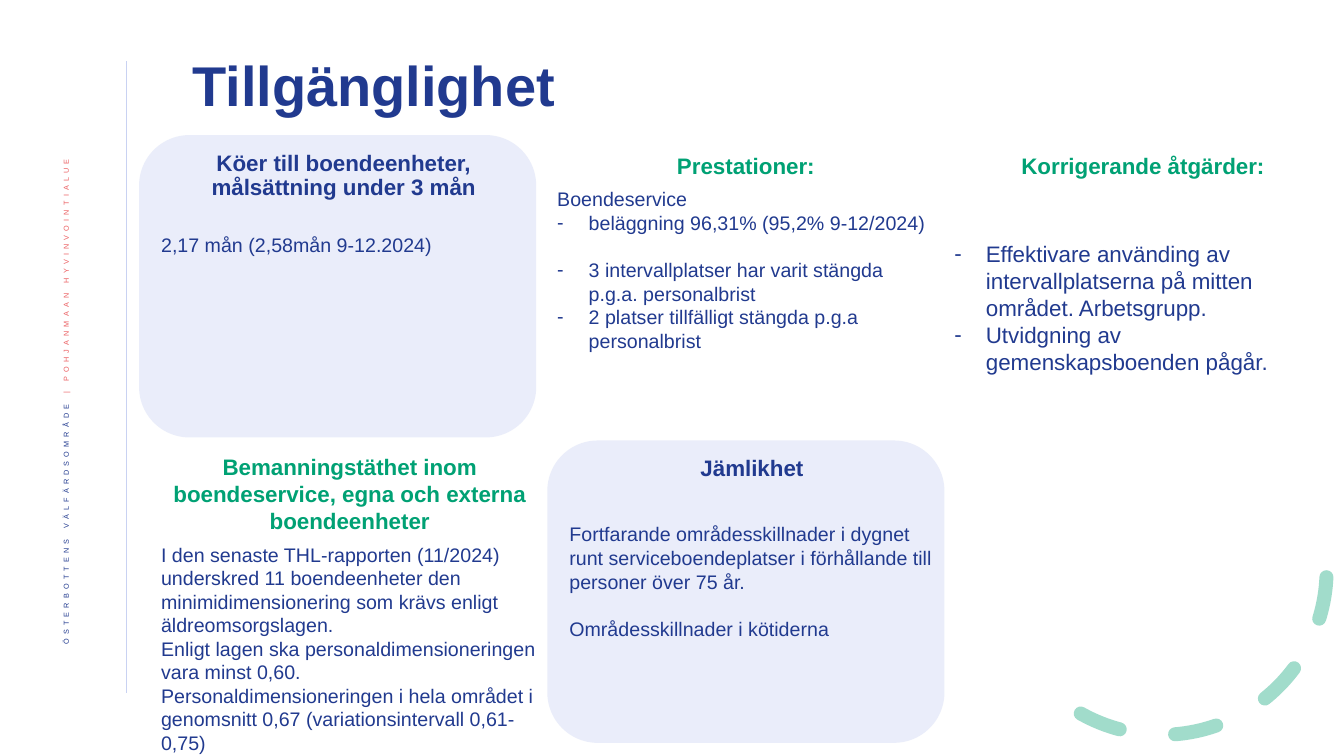
from lxml.etree import SubElement
from pptx import Presentation
from pptx.dml.color import RGBColor
from pptx.enum.shapes import MSO_CONNECTOR, MSO_SHAPE
from pptx.enum.dml import MSO_LINE
from pptx.enum.text import MSO_ANCHOR, PP_ALIGN
from pptx.oxml.ns import qn
from pptx.util import Pt

NAVY, GREEN, CORAL, LAVENDER = "213A8F", "00A174", "EB5C5F", "C9D2F2"
COLUMN_WIDTH, CARD_HEIGHT, CARD_INSET = 283.68, 216, 8.64
BULLET_INDENT = 22.5

TITLE = "Tillgänglighet"
SIDE_LABEL = [("ÖSTERBOTTENS VÄLFÄRDSOMRÅDE ", NAVY), ("| POHJANMAAN HYVINVOINTIALUE ", CORAL)]

# Each body line: text, bulleted, space before in points
SECTIONS = [
    dict(heading="Köer till boendeenheter, målsättning under 3 mån",
         left=99.36, top=96.48, card=True, after=23, size=14,
         body=[("2,17 mån (2,58mån 9-12.2024)", False, 0)]),
    dict(heading="Prestationer:",
         left=390.96, top=105.12, card=False, after=6, size=14,
         body=[("Boendeservice", False, 0),
               ("beläggning 96,31% (95,2% 9-12/2024)", True, 0),
               ("3 intervallplatser har varit stängda p.g.a. personalbrist", True, 17),
               ("2 platser tillfälligt stängda p.g.a personalbrist", True, 0)]),
    dict(heading="Korrigerande åtgärder:",
         left=674.64, top=105.12, card=False, after=44, size=16,
         body=[("Effektivare använding av intervallplatserna på mitten området. Arbetsgrupp.", True, 0),
               ("Utvidgning av gemenskapsboenden pågår.", True, 0)]),
    dict(heading="Jämlikhet",
         left=390.96, top=314.64, card=True, after=29, size=14,
         body=[("Fortfarande områdesskillnader i dygnet runt serviceboendeplatser "
                "i förhållande till personer över 75 år.", False, 0),
               ("Områdesskillnader i kötiderna", False, 17)]),
    dict(heading="Bemanningstäthet inom boendeservice, egna och externa boendeenheter",
         left=108, top=320.4, card=False, after=6, size=14,
         body=[("I den senaste THL-rapporten (11/2024) underskred 11 boendeenheter den "
                "minimidimensionering som krävs enligt äldreomsorgslagen.", False, 0),
               ("Enligt lagen ska personaldimensioneringen vara minst 0,60.", False, 0),
               ("Personaldimensioneringen i hela området i genomsnitt 0,67 "
                "(variationsintervall 0,61-0,75)", False, 0)]),
]


def rgb(value):
    return RGBColor.from_string(value)


def set_alpha(properties, percent):
    color = next(properties.iter(qn("a:srgbClr")))
    SubElement(color, qn("a:alpha"), val=str(percent * 1000))


def write(paragraph, text, size=14, color=NAVY, bold=False, align=PP_ALIGN.LEFT,
          spacing=1.0, before=0, after=0, bullet=False):
    """Append a formatted run to the paragraph and return its font."""
    if bullet:
        properties = paragraph._p.get_or_add_pPr()
        properties.set("marL", str(Pt(BULLET_INDENT)))
        properties.set("indent", str(-Pt(BULLET_INDENT)))
        SubElement(properties, qn("a:buFont"), typeface="Arial")
        SubElement(properties, qn("a:buChar"), char="-")
    paragraph.alignment = align
    paragraph.line_spacing = spacing
    paragraph.space_before, paragraph.space_after = Pt(before), Pt(after)
    run = paragraph.add_run()
    run.text = text
    font = run.font
    font.name, font.size, font.bold = "Arial", Pt(size), bold
    font.color.rgb = rgb(color)
    return font


def add_frame(slide, left, top, width, height):
    box = slide.shapes.add_textbox(Pt(left), Pt(top), Pt(width), Pt(height))
    box.text_frame.word_wrap = True
    return box.text_frame


def add_side_label(slide):
    rule = slide.shapes.add_connector(MSO_CONNECTOR.STRAIGHT, Pt(90), Pt(43.92), Pt(90), Pt(495.36))
    rule.line.color.rgb = rgb(LAVENDER)
    rule.line.width = Pt(0.5)
    SubElement(rule._element.spPr, qn("a:effectLst"))

    frame = add_frame(slide, 30.24, 102.24, 37.44, 412.56)
    frame.vertical_anchor = MSO_ANCHOR.MIDDLE
    frame._txBody.bodyPr.set("vert", "vert270")
    for text, color in SIDE_LABEL:
        font = write(frame.paragraphs[0], text, size=9, color=color,
                     align=PP_ALIGN.RIGHT, spacing=0.9)
        font._element.set("baseline", "30000")
        font._element.set("spc", "300")


def add_dashed_arc(slide):
    arc = slide.shapes.add_shape(MSO_SHAPE.ARC, Pt(712.08), Pt(289.44), Pt(235.44), Pt(235.44))
    arc.shadow.inherit = False
    arc.rotation = 98.9
    arc.adjustments[0], arc.adjustments[1] = 158.17, 17.81
    arc.fill.background()
    arc.line.color.rgb = rgb(GREEN)
    arc.line.width = Pt(10)
    arc.line.dash_style = MSO_LINE.DASH
    outline = arc._element.spPr.find(qn("a:ln"))
    outline.set("cap", "rnd")
    set_alpha(outline, 36)


def add_section(slide, heading, left, top, card, after, size, body):
    width = COLUMN_WIDTH
    if card:
        panel = slide.shapes.add_shape(MSO_SHAPE.ROUNDED_RECTANGLE, Pt(left), Pt(top),
                                       Pt(COLUMN_WIDTH), Pt(CARD_HEIGHT))
        panel.shadow.inherit = False
        panel.fill.solid()
        panel.fill.fore_color.rgb = rgb(LAVENDER)
        set_alpha(panel._element.spPr, 38)
        panel.line.fill.background()
        left, top, width = left + CARD_INSET, top + CARD_INSET, width - CARD_INSET
    frame = add_frame(slide, left, top, width, CARD_HEIGHT - CARD_INSET)
    write(frame.paragraphs[0], heading, size=16, color=NAVY if card else GREEN, bold=True,
          align=PP_ALIGN.CENTER, spacing=0.9 if card else 1.0, after=after)
    for text, bullet, before in body:
        write(frame.add_paragraph(), text, size=size, bullet=bullet, before=before)


def main():
    presentation = Presentation()
    presentation.slide_width, presentation.slide_height = Pt(960), Pt(540)
    slide = presentation.slides.add_slide(presentation.slide_layouts[5])
    add_side_label(slide)
    add_dashed_arc(slide)

    title = slide.shapes.title
    title.left, title.top, title.width, title.height = Pt(130.32), Pt(32.4), Pt(734.4), Pt(61.2)
    title.text_frame.vertical_anchor = MSO_ANCHOR.MIDDLE
    write(title.text_frame.paragraphs[0], TITLE, size=40, bold=True, spacing=0.9)

    for section in SECTIONS:
        add_section(slide, **section)
    presentation.save("out.pptx")


if __name__ == "__main__":
    main()
